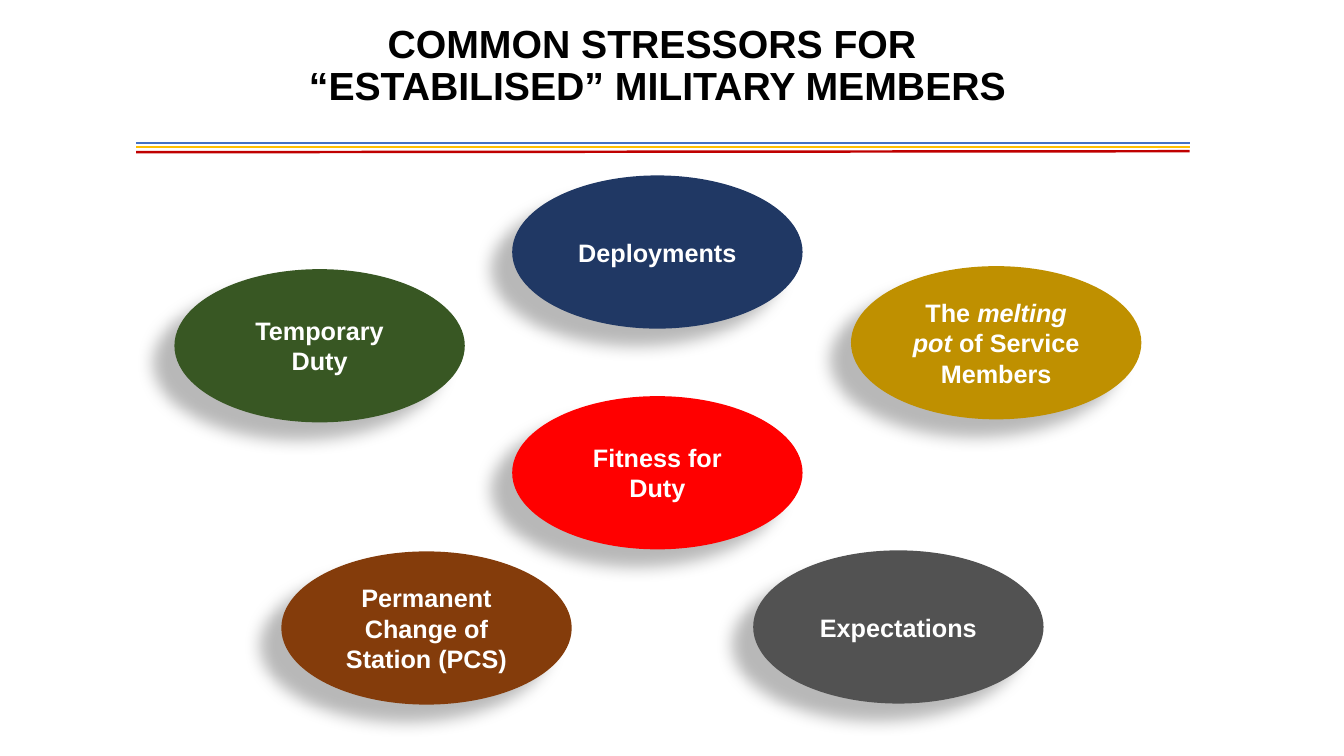
import pptx
import pptx.util
import pptx.dml.color
import pptx.enum.shapes
import pptx.enum.text
import pptx.oxml.ns
from lxml import etree

Inches, Pt = pptx.util.Inches, pptx.util.Pt
RGBColor = pptx.dml.color.RGBColor
qn = pptx.oxml.ns.qn

BLACK = RGBColor(0x00, 0x00, 0x00)
WHITE = RGBColor(0xFF, 0xFF, 0xFF)
BLUE = RGBColor(0x44, 0x72, 0xC4)
AMBER = RGBColor(0xFF, 0xC0, 0x00)
CRIMSON = RGBColor(0xC0, 0x00, 0x00)
GREEN = RGBColor(0x38, 0x57, 0x23)
BROWN = RGBColor(0x84, 0x3C, 0x0B)
RED = RGBColor(0xFF, 0x00, 0x00)
GOLD = RGBColor(0xBF, 0x90, 0x00)
GRAY = RGBColor(0x52, 0x52, 0x52)
NAVY = RGBColor(0x20, 0x38, 0x64)

TITLE_FONT = {"name": "Arial", "size": Pt(28), "bold": True}
OVAL_FONT = {"name": "Arial", "size": Pt(18), "bold": True}
OVAL_W, OVAL_H = 2.88, 1.52
RULE_LEFT, RULE_RIGHT = 1.35, 11.8

# start y, end y, colour
RULES = [(1.42, 1.42, BLUE), (1.46, 1.46, AMBER), (1.51, 1.5, CRIMSON)]

# left, top, fill, runs as (text, italic)
STRESSORS = [
    (1.73, 2.67, GREEN, [("Temporary Duty", False)]),
    (2.79, 5.47, BROWN, [("Permanent Change of Station (PCS)", False)]),
    (5.08, 3.93, RED, [("Fitness for Duty", False)]),
    (8.44, 2.64, GOLD, [("The ", False), ("melting pot ", True),
                        ("of Service Members", False)]),
    (7.47, 5.46, GRAY, [("Expectations", False)]),
    (5.08, 1.74, NAVY, [("Deployments", False)]),
]


def set_font(font, color, values):
    for name, value in values.items():
        setattr(font, name, value)
    font.color.rgb = color


def center_text(tf):
    tf.word_wrap = True
    tf.vertical_anchor = pptx.enum.text.MSO_ANCHOR.MIDDLE
    p = tf.paragraphs[0]
    p.alignment = pptx.enum.text.PP_ALIGN.CENTER
    return p


def add_rule(s, y1, y2, color):
    c = s.shapes.add_connector(
        pptx.enum.shapes.MSO_CONNECTOR.STRAIGHT,
        Inches(RULE_LEFT), Inches(y1), Inches(RULE_RIGHT), Inches(y2))
    c.line.color.rgb = color
    c.line.width = Pt(1.75)
    etree.SubElement(c._element.spPr, qn("a:effectLst"))


def add_title(s, text):
    sp = s.shapes.add_textbox(Inches(0.99), Inches(0.11), Inches(11.06), Inches(1.11))
    p = center_text(sp.text_frame)
    p.line_spacing = 0.9
    p.text = text
    for r in p.runs:
        set_font(r.font, BLACK, TITLE_FONT)


def add_shadow(sp):
    sp.shadow.inherit = False
    effects = sp._element.spPr.find(qn("a:effectLst"))
    shadow = etree.SubElement(effects, qn("a:outerShdw"), {
        "blurRad": str(Pt(11.8)), "dist": str(Pt(19.7)),
        "dir": str(141 * 60000), "algn": "ctr", "rotWithShape": "0"})
    color = etree.SubElement(shadow, qn("a:srgbClr"), val=str(BLACK))
    etree.SubElement(color, qn("a:alpha"), val="28000")


def add_stressor(s, left, top, fill, runs):
    sp = s.shapes.add_shape(pptx.enum.shapes.MSO_SHAPE.OVAL, Inches(left), Inches(top),
                            Inches(OVAL_W), Inches(OVAL_H))
    sp.fill.solid()
    sp.fill.fore_color.rgb = fill
    sp.line.fill.background()
    add_shadow(sp)
    p = center_text(sp.text_frame)
    for text, italic in runs:
        r = p.add_run()
        r.text = text
        set_font(r.font, WHITE, {**OVAL_FONT, "italic": italic})


def main():
    prs = pptx.Presentation()
    prs.slide_width, prs.slide_height = Inches(13.33), Inches(7.5)
    s = prs.slides.add_slide(prs.slide_layouts[6])

    # Tricolour rule under the title
    for rule in RULES:
        add_rule(s, *rule)

    # Title
    add_title(s, "COMMON STRESSORS FOR \v“ESTABILISED” MILITARY MEMBERS")

    # Stressor ovals
    for stressor in STRESSORS:
        add_stressor(s, *stressor)

    prs.save("out.pptx")


if __name__ == "__main__":
    main()
